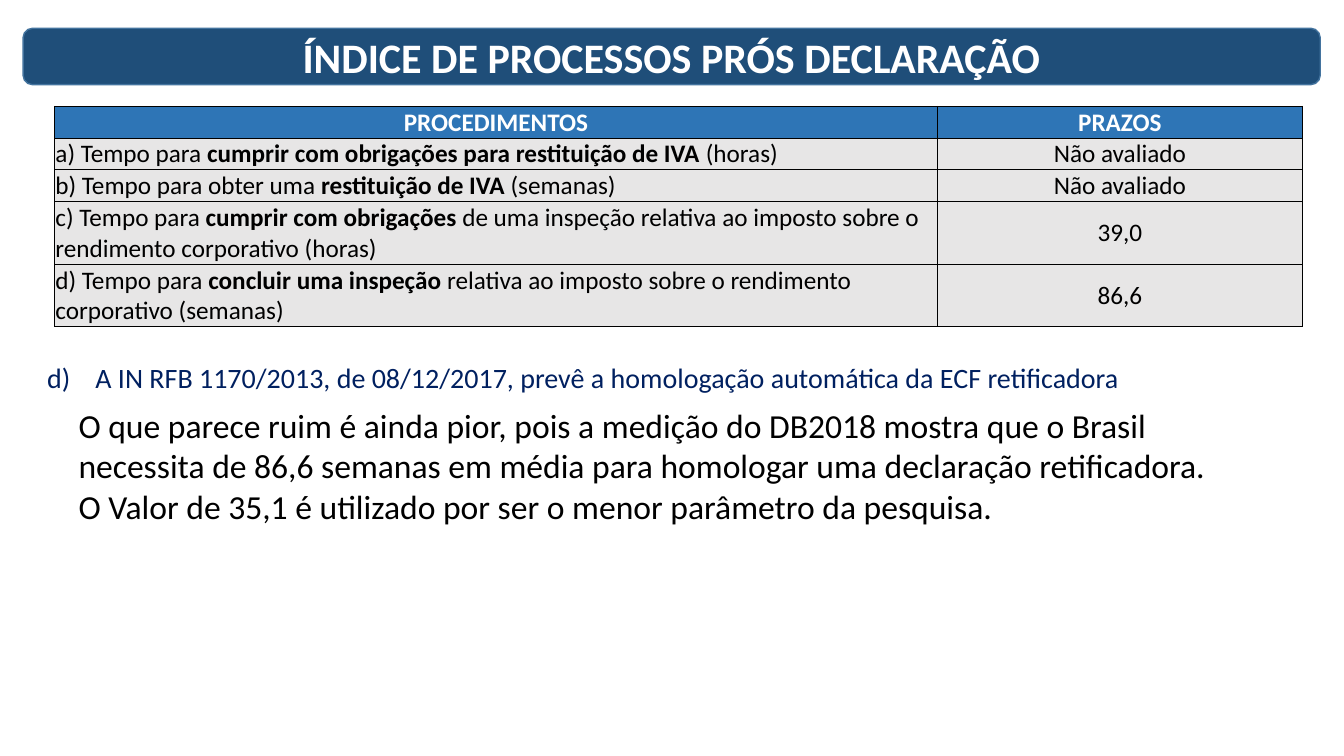
import pptx
import pptx.util
import pptx.dml.color
import pptx.enum.shapes
import pptx.enum.text
import pptx.oxml
import pptx.oxml.ns

Pt = pptx.util.Pt
RGBColor = pptx.dml.color.RGBColor
ALIGN = pptx.enum.text.PP_ALIGN
MIDDLE = pptx.enum.text.MSO_ANCHOR.MIDDLE

FONT = "Calibri"
WHITE = RGBColor(0xFF, 0xFF, 0xFF)
BLACK = RGBColor(0, 0, 0)
NAVY = RGBColor(0x00, 0x20, 0x60)
BANNER_FILL = RGBColor(0x1F, 0x4E, 0x79)
BANNER_LINE = RGBColor(0x43, 0x73, 0x9E)
HEADER_FILL = RGBColor(0x2E, 0x75, 0xB6)
ROW_FILL = RGBColor(0xE7, 0xE6, 0xE6)

HEADER = ("PROCEDIMENTOS", "PRAZOS")
PROCEDURES = [
    ("a) Tempo para ", "cumprir com obrigações para restituição de IVA ", "(horas)", "Não avaliado"),
    ("b) Tempo para obter uma ", "restituição de IVA ", "(semanas)", "Não avaliado"),
    ("c) Tempo para ", "cumprir com obrigações",
     " de uma inspeção relativa ao imposto sobre o rendimento corporativo (horas)", "39,0"),
    ("d) Tempo para ", "concluir uma inspeção",
     " relativa ao imposto sobre o rendimento corporativo (semanas)", "86,6"),
]
COLUMN_SHARE = 0.7076
ROW_LINES = (1, 1, 1, 2, 2)
NOTE = "d)\tA IN RFB 1170/2013, de 08/12/2017, prevê a homologação automática da ECF retificadora"
COMMENT = (
    "O que parece ruim é ainda pior, pois a medição do DB2018 mostra que o Brasil "
    "necessita de 86,6 semanas em média para homologar uma declaração retificadora. "
    "O Valor de 35,1 é utilizado por ser o menor parâmetro da pesquisa."
)


def style(para, size, color, bold=None, align=ALIGN.LEFT):
    para.alignment = align
    font = para.font
    font.name, font.size, font.bold = FONT, Pt(size), bold
    font.color.rgb = color


def add_banner(page, left, top, width, height):
    banner = page.shapes.add_shape(
        pptx.enum.shapes.MSO_SHAPE.ROUNDED_RECTANGLE, Pt(left), Pt(top), Pt(width), Pt(height))
    banner.shadow.inherit = False
    banner.fill.solid()
    banner.fill.fore_color.rgb = BANNER_FILL
    banner.line.color.rgb = BANNER_LINE
    banner.line.width = Pt(1)
    frame = banner.text_frame
    frame.vertical_anchor = MIDDLE
    para = frame.paragraphs[0]
    para.text = "ÍNDICE DE PROCESSOS PRÓS DECLARAÇÃO"
    style(para, 30, WHITE, True, ALIGN.CENTER)


def format_cell(cell, fill):
    cell.margin_left = cell.margin_right = cell.margin_top = Pt(0.72)
    cell.margin_bottom = 0
    cell.vertical_anchor = MIDDLE
    properties = cell._tc.get_or_add_tcPr()
    for side in "LRTB":
        properties.append(pptx.oxml.parse_xml(
            f'<a:ln{side} {pptx.oxml.ns.nsdecls("a")} w="{Pt(0.5)}">'
            f'<a:solidFill><a:srgbClr val="{BLACK}"/></a:solidFill></a:ln{side}>'))
    cell.fill.solid()
    cell.fill.fore_color.rgb = fill


def add_procedures(page, left, top, width, height):
    table = page.shapes.add_table(
        len(ROW_LINES), len(HEADER), Pt(left), Pt(top), Pt(width), Pt(height)).table
    for column, share in zip(table.columns, (COLUMN_SHARE, 1 - COLUMN_SHARE)):
        column.width = Pt(width * share)
    for row, lines in zip(table.rows, ROW_LINES):
        row.height = Pt(height * lines / sum(ROW_LINES))

    for column, title in enumerate(HEADER):
        cell = table.cell(0, column)
        format_cell(cell, HEADER_FILL)
        para = cell.text_frame.paragraphs[0]
        para.text = title
        style(para, 18, WHITE, True, ALIGN.CENTER)

    for row, (before, emphasis, after, term) in enumerate(PROCEDURES, 1):
        cell = table.cell(row, 0)
        format_cell(cell, ROW_FILL)
        para = cell.text_frame.paragraphs[0]
        style(para, 18, BLACK)
        for text, bold in ((before, False), (emphasis, True), (after, False)):
            span = para.add_run()
            span.text = text
            span.font.bold = bold
        cell = table.cell(row, 1)
        format_cell(cell, ROW_FILL)
        para = cell.text_frame.paragraphs[0]
        para.text = term
        style(para, 18, BLACK, False, ALIGN.CENTER)


def add_text(page, left, top, width, height, text, size, color, hanging=0):
    box = page.shapes.add_textbox(Pt(left), Pt(top), Pt(width), Pt(height))
    box.text_frame.word_wrap = True
    para = box.text_frame.paragraphs[0]
    para.text = text
    if hanging:
        properties = para._p.get_or_add_pPr()
        properties.set("marL", str(Pt(hanging)))
        properties.set("indent", str(-Pt(hanging)))
    style(para, size, color)


def main():
    deck = pptx.Presentation()
    deck.slide_width, deck.slide_height = Pt(960), Pt(540)
    page = deck.slides.add_slide(deck.slide_layouts[6])
    add_banner(page, 16.5, 20.2, 926.6, 40.3)
    add_procedures(page, 38.9, 75.8, 891.4, 154.6)
    add_text(page, 26.6, 254.2, 903.6, 31.7, NOTE, 20, NAVY, hanging=34.5)
    add_text(page, 49, 285.8, 826.6, 94.3, COMMENT, 24, BLACK)
    deck.save("out.pptx")


if __name__ == "__main__":
    main()
